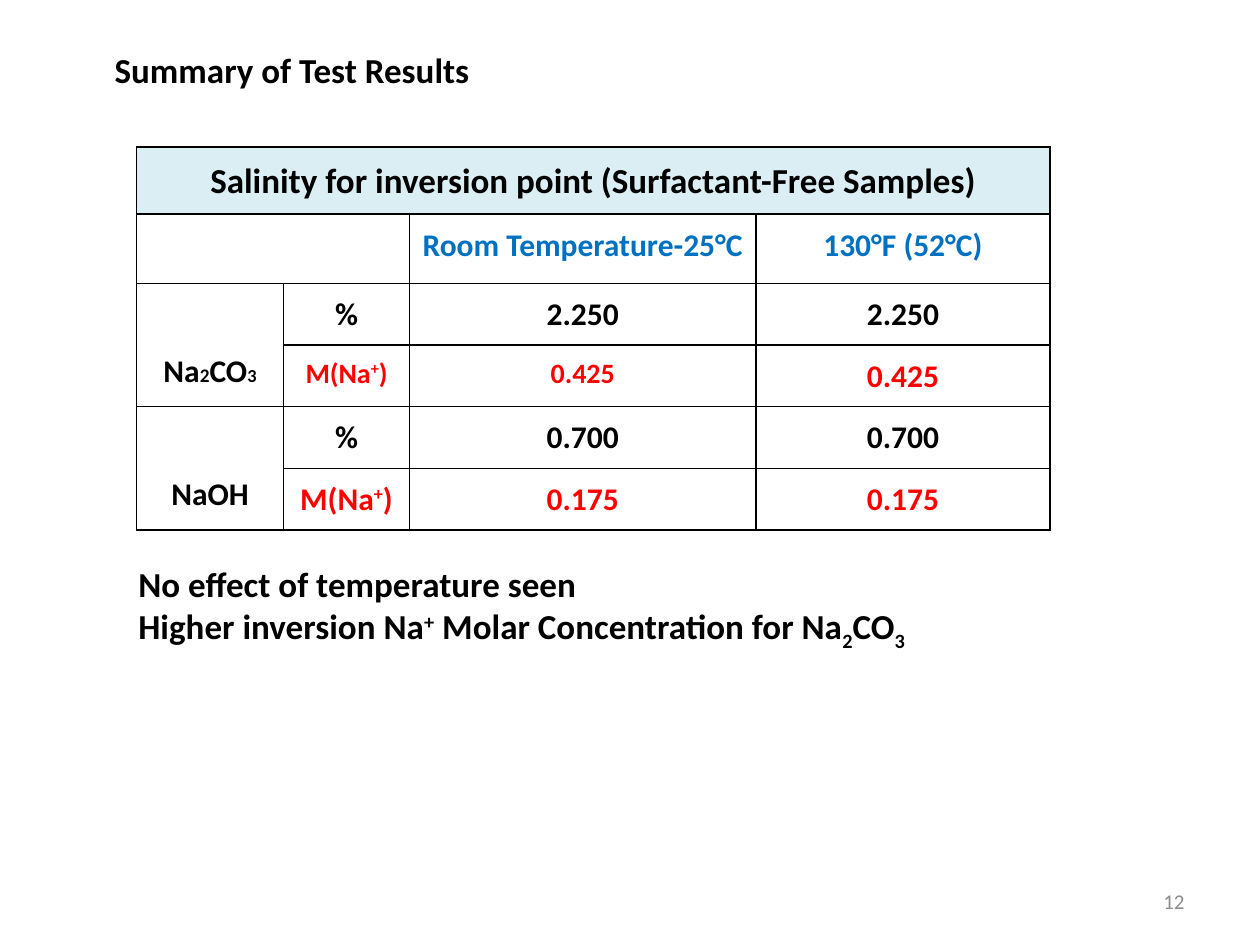
from lxml import etree
from pptx import Presentation
from pptx import util as u
from pptx.dml.color import RGBColor
from pptx.enum import text
from pptx.oxml.ns import qn

BLACK, RED, BLUE, GREY, PALE = "000000", "FF0000", "0070C0", "8C8C8C", "DBEEF4"
CENTER, RIGHT = text.PP_ALIGN.CENTER, text.PP_ALIGN.RIGHT


def color(value):
    return RGBColor.from_string(value)


def raised(words):
    return words, {"base": 30}


def lowered(words):
    return words, {"base": -25}


def sized(words, size):
    return words, {"size": size}


class Sheet:
    """Style and current slide, measured in grid units of 1/12 inch."""
    font = "Calibri"
    unit = u.Inches(1) / 12

    def __init__(self, deck):
        self.slide = deck.slides.add_slide(deck.slide_layouts[6])

    def grid(self, *lengths):
        return [round(length * self.unit) for length in lengths]

    def fill_para(self, para, spans, size, ink=BLACK, bold=True, align=None):
        for item in spans:
            words, look = (item, {}) if isinstance(item, str) else item
            span = para.add_run()
            span.text = words
            if "size" in look:
                span.font.size = u.Pt(look["size"])
            if "base" in look:
                span._r.get_or_add_rPr().set("baseline", str(look["base"] * 1000))
        para.alignment = align
        para.font.name = self.font
        para.font.size = u.Pt(size)
        para.font.bold = bold
        para.font.color.rgb = color(ink)

    def textbox(self, place, lines, size, grow=True, inset=0.1, **look):
        frame = self.slide.shapes.add_textbox(*self.grid(*place)).text_frame
        frame.word_wrap = True
        frame.margin_left = u.Inches(inset)
        if grow:
            frame.auto_size = text.MSO_AUTO_SIZE.SHAPE_TO_FIT_TEXT
        else:
            frame.vertical_anchor = text.MSO_ANCHOR.MIDDLE
        for number, spans in enumerate(lines):
            para = frame.add_paragraph() if number else frame.paragraphs[0]
            self.fill_para(para, spans, size, **look)

    def table(self, left, top, columns, rows):
        place = self.grid(left, top, sum(columns), sum(rows))
        table = self.slide.shapes.add_table(len(rows), len(columns), *place).table
        table.first_row = table.horz_banding = False
        for column, width in zip(table.columns, self.grid(*columns)):
            column.width = width
        for row, height in zip(table.rows, self.grid(*rows)):
            row.height = height
        for cell in table.iter_cells():
            self.border(cell)
            cell.fill.background()
        return table

    def border(self, cell):
        props = cell._tc.get_or_add_tcPr()
        for side in ("a:lnL", "a:lnR", "a:lnT", "a:lnB"):
            line = etree.SubElement(props, qn(side), w=str(u.Pt(1)))
            fill = etree.SubElement(line, qn("a:solidFill"))
            etree.SubElement(fill, qn("a:srgbClr"), val=BLACK)

    def cell(self, cell, spans, size=18, ink=BLACK, top=0.05):
        cell.margin_top = u.Inches(top)
        para = cell.text_frame.paragraphs[0]
        para.line_spacing = 1.15
        para.space_after = u.Pt(10)
        self.fill_para(para, spans, size, ink, align=CENTER)


def main():
    deck = Presentation()
    deck.slide_width, deck.slide_height = u.Inches(10), u.Inches(7.5)
    sheet = Sheet(deck)

    # Title
    sheet.textbox((9, 4, 94, 5.25), [["Summary of Test Results"]], 20, inset=0.16)

    # Table frame and headings
    table = sheet.table(13, 14, (14, 12, 33, 28), (6.4, 6.6) + (5.87,) * 4)
    for first, last in (((0, 0), (0, 3)), ((1, 0), (1, 1)),
                        ((2, 0), (3, 0)), ((4, 0), (5, 0))):
        table.cell(*first).merge(table.cell(*last))
    banner = table.cell(0, 0)
    banner.fill.solid()
    banner.fill.fore_color.rgb = color(PALE)
    sheet.cell(banner, ["Salinity for inversion point (Surfactant-Free Samples)"], 20)
    for column, heading in enumerate(("Room Temperature-25°C", "130°F (52°C)"), 2):
        sheet.cell(table.cell(1, column), [heading], ink=BLUE)

    # Two rows for each alkali: percent, then sodium molarity
    molarity = ["M(Na", raised("+"), ")"]
    carbonate = ["Na", sized("2", 11), "CO", sized("3", 10.5)]
    alkalis = (
        (carbonate, "2.250", "0.425", (16, 16, 18)),
        (["NaOH"], "0.700", "0.175", (18, 18, 18)),
    )
    for number, (name, percent, molar, sizes) in enumerate(alkalis):
        row = 2 + 2 * number
        sheet.cell(table.cell(row, 0), name, top=0.5)
        for column, spans in enumerate((["%"], [percent], [percent]), 1):
            sheet.cell(table.cell(row, column), spans)
        values = (molarity, [molar], [molar])
        for column, (spans, size) in enumerate(zip(values, sizes), 1):
            sheet.cell(table.cell(row + 1, column), spans, size, RED)

    # Page number
    sheet.textbox((86, 83.4, 28, 4.8), [["12"]], 12, grow=False,
                  ink=GREY, bold=False, align=RIGHT)

    # Conclusions
    sheet.textbox((12, 53, 100, 9.25), [
        ["No effect of temperature seen"],
        ["Higher inversion Na", raised("+"), " Molar Concentration for Na",
         lowered("2"), "CO", lowered("3")],
    ], 20)

    deck.save("out.pptx")


if __name__ == "__main__":
    main()
